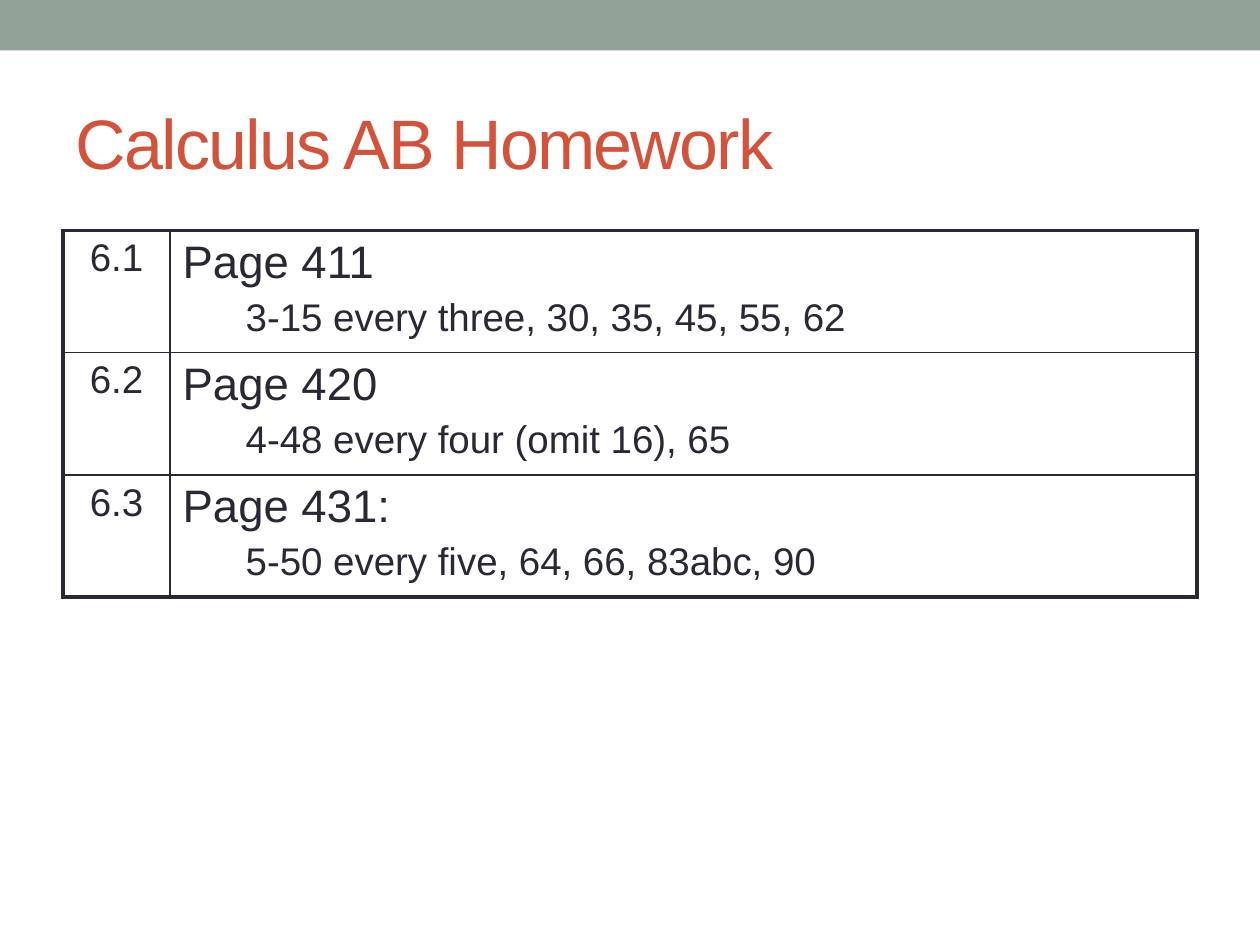
from dataclasses import dataclass

from lxml import etree
from pptx import Presentation
from pptx import util as u
from pptx.dml.color import RGBColor
from pptx.enum import shapes, text
from pptx.oxml import ns


@dataclass(frozen=True)
class Theme:
    font: str = "Arial"
    white: str = "FFFFFF"
    ink: str = "292934"
    accent: str = "D2533C"
    band: str = "93A299"
    title_size: float = 40
    page_size: float = 26
    detail_size: float = 22
    outer_line: float = 2.25
    inner_line: float = 1


@dataclass(frozen=True)
class Assignment:
    section: str
    page: str
    problems: str


THEME = Theme()
COLUMN_WIDTHS = (0.85, 8.15)
ROW_HEIGHT = 0.97
ASSIGNMENTS = (
    Assignment("6.1", "Page 411", "3-15 every three, 30, 35, 45, 55, 62"),
    Assignment("6.2", "Page 420", "4-48 every four (omit 16), 65"),
    Assignment("6.3", "Page 431:", "5-50 every five, 64, 66, 83abc, 90"),
)


def write(paragraph, words: str, *, size: float, color: str = THEME.ink,
          align=text.PP_ALIGN.LEFT, before: float = 0, level: int = 0,
          indent: float = 0, tracking: float = 0) -> None:
    """Fill a paragraph; sizes and tracking in points, indent in inches."""
    paragraph.alignment = align
    paragraph.level = level
    paragraph.space_before = u.Pt(before)
    properties = paragraph._p.get_or_add_pPr()
    properties.set("marL", str(u.Inches(indent)))
    properties.set("indent", "0")
    run = paragraph.add_run()
    run.text = words
    run.font.name = THEME.font
    run.font.size = u.Pt(size)
    run.font.color.rgb = RGBColor.from_string(color)
    if tracking:
        run._r.get_or_add_rPr().set("spc", str(int(tracking * 100)))


def add_border(cell, side: str, width: float) -> None:
    """Draw one side (L, R, T or B) of a cell; call before filling it."""
    line = etree.SubElement(cell._tc.get_or_add_tcPr(), ns.qn(f"a:ln{side}"),
                            w=str(u.Pt(width)))
    fill = etree.SubElement(line, ns.qn("a:solidFill"))
    etree.SubElement(fill, ns.qn("a:srgbClr"), val=THEME.ink)


def format_cell(cell, at_edge: dict[str, bool]) -> None:
    for side, is_outer in at_edge.items():
        add_border(cell, side, THEME.outer_line if is_outer else THEME.inner_line)
    cell.fill.solid()
    cell.fill.fore_color.rgb = RGBColor.from_string(THEME.white)


def add_band(slide, width: int) -> None:
    band = slide.shapes.add_shape(shapes.MSO_SHAPE.RECTANGLE, 0, 0, width, u.Inches(0.4))
    band.shadow.inherit = False
    band.fill.solid()
    band.fill.fore_color.rgb = RGBColor.from_string(THEME.band)
    band.line.fill.background()


def add_title(slide, words: str) -> None:
    title = slide.shapes.title
    title.left, title.top = u.Inches(0.5), u.Inches(0.58)
    title.width, title.height = u.Inches(9), u.Inches(1.08)
    title.text_frame.vertical_anchor = text.MSO_ANCHOR.MIDDLE
    write(title.text_frame.paragraphs[0], words, size=THEME.title_size,
          color=THEME.accent, tracking=-1)


def add_homework_table(slide, assignments: tuple[Assignment, ...]) -> None:
    row_count, column_count = len(assignments), len(COLUMN_WIDTHS)
    table = slide.shapes.add_table(
        row_count, column_count, u.Inches(0.5), u.Inches(1.83),
        u.Inches(sum(COLUMN_WIDTHS)), u.Inches(ROW_HEIGHT * row_count)).table
    table.first_row = table.horz_banding = False
    for column, width in zip(table.columns, COLUMN_WIDTHS):
        column.width = u.Inches(width)

    for row, assignment in enumerate(assignments):
        table.rows[row].height = u.Inches(ROW_HEIGHT)
        for column in range(column_count):
            format_cell(table.cell(row, column), {
                "L": column == 0, "R": column == column_count - 1,
                "T": row == 0, "B": row == row_count - 1})
        section, details = (table.cell(row, column).text_frame for column in range(2))
        write(section.paragraphs[0], assignment.section, size=THEME.detail_size,
              align=text.PP_ALIGN.CENTER)
        write(details.paragraphs[0], assignment.page, size=THEME.page_size)
        write(details.add_paragraph(), assignment.problems, size=THEME.detail_size,
              before=5, level=1, indent=0.5)


def main() -> None:
    presentation = Presentation()
    presentation.slide_width, presentation.slide_height = u.Inches(10), u.Inches(7.5)
    slide = presentation.slides.add_slide(presentation.slide_layouts[5])
    add_band(slide, presentation.slide_width)
    add_title(slide, "Calculus AB Homework")
    add_homework_table(slide, ASSIGNMENTS)
    presentation.save("out.pptx")


if __name__ == "__main__":
    main()
